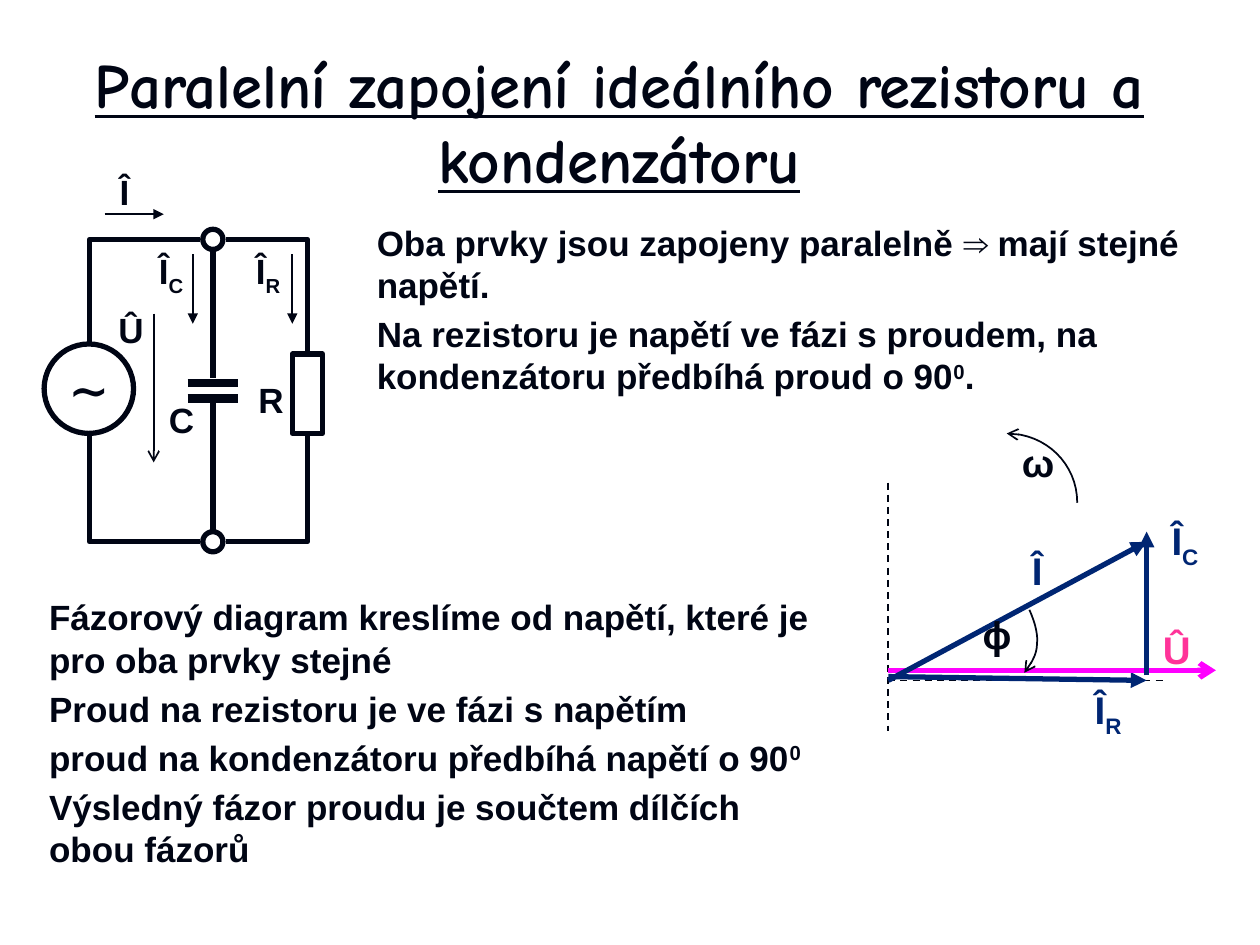
from dataclasses import dataclass

import lxml.etree
import pptx
import pptx.dml.color
import pptx.enum.dml
import pptx.enum.shapes
import pptx.enum.text
import pptx.oxml.ns
import pptx.util

INK, NAVY, MAGENTA, PINK = "000514", "002673", "FF00FF", "FF3399"
SUPER, SUB = 30, -25
ALIGN = pptx.enum.text.PP_ALIGN
ANCHOR = pptx.enum.text.MSO_ANCHOR
SHAPE = pptx.enum.shapes.MSO_SHAPE
Point = tuple[float, float]

deck = pptx.Presentation()
deck.slide_width = pptx.util.Inches(10)
deck.slide_height = pptx.util.Inches(7.5)
CELL = deck.slide_width / 100  # the slide is 100 columns by 75 rows
slide = deck.slides.add_slide(deck.slide_layouts[6])


@dataclass
class Label:
    box: tuple[float, float, float, float]
    symbol: str
    index: str = ""
    color: str = INK
    size: float = 22


@dataclass
class Line:
    start: Point
    end: Point
    color: str = INK
    width: float = 1
    arrow: str = ""
    dashed: bool = False


def grid(*cells: float) -> list[int]:
    return [round(cell * CELL) for cell in cells]


def rgb(color: str) -> pptx.dml.color.RGBColor:
    return pptx.dml.color.RGBColor.from_string(color)


def add_run(paragraph, text: str, size: float, color: str = INK,
            font: str = "Arial", baseline: int = 0):
    run = paragraph.add_run()
    run.text = text
    run.font.size = pptx.util.Pt(size)
    run.font.name = font
    run.font.bold = True
    run.font.color.rgb = rgb(color)
    if baseline:
        run.font._element.set("baseline", str(baseline * 1000))
    return run


def add_frame(box: tuple, anchor=ANCHOR.TOP, wrap: bool = True, inset: float = 0.4):
    frame = slide.shapes.add_textbox(*grid(*box)).text_frame
    frame.word_wrap = wrap
    frame.vertical_anchor = anchor
    frame.margin_left = frame.margin_right = grid(inset)[0]
    frame.margin_top = frame.margin_bottom = grid(0.4)[0]
    return frame


def draw_body(box: tuple, paragraphs: list[list[tuple[str, int]]]) -> None:
    """Write paragraphs given as lists of (text, baseline shift) runs."""
    frame = add_frame(box)
    for number, runs in enumerate(paragraphs):
        paragraph = frame.add_paragraph() if number else frame.paragraphs[0]
        paragraph.space_before = pptx.util.Pt(4)
        for text, baseline in runs:
            add_run(paragraph, text, 20, baseline=baseline)


def draw_label(label: Label, anchor, align) -> None:
    paragraph = add_frame(label.box, anchor, wrap=False).paragraphs[0]
    paragraph.alignment = align
    add_run(paragraph, label.symbol, label.size, label.color)
    if label.index:
        add_run(paragraph, label.index, label.size, label.color, baseline=SUB)


def style_line(line, color: str, width: float, head: str = "", tail: str = "") -> None:
    line.color.rgb = rgb(color)
    line.width = pptx.util.Pt(width)
    for end, arrow in (("a:headEnd", head), ("a:tailEnd", tail)):
        if arrow:
            lxml.etree.SubElement(line._get_or_add_ln(), pptx.oxml.ns.qn(end), type=arrow)


def draw_line(line: Line) -> None:
    connector = slide.shapes.add_connector(
        pptx.enum.shapes.MSO_CONNECTOR.STRAIGHT, *grid(*line.start, *line.end))
    if line.dashed:
        connector.line.dash_style = pptx.enum.dml.MSO_LINE.DASH
    style_line(connector.line, line.color, line.width, tail=line.arrow)
    lxml.etree.SubElement(connector._element.spPr, pptx.oxml.ns.qn("a:effectLst"))


def draw_path(points: list[Point], width: float, head: str = "", tail: str = "") -> None:
    builder = slide.shapes.build_freeform(*grid(*points[0]))
    builder.add_line_segments([grid(*point) for point in points[1:]], close=False)
    outline = builder.convert_to_shape()
    outline.fill.background()
    outline.shadow.inherit = False
    style_line(outline.line, INK, width, head, tail)


def bezier(p0: Point, p1: Point, p2: Point, p3: Point, steps: int = 16) -> list[Point]:
    shares = [step / steps for step in range(steps + 1)]
    return [tuple((1 - t) ** 3 * a + 3 * (1 - t) ** 2 * t * b
                  + 3 * (1 - t) * t ** 2 * c + t ** 3 * d
                  for a, b, c, d in zip(p0, p1, p2, p3)) for t in shares]


def draw_part(kind, box: tuple):
    part = slide.shapes.add_shape(kind, *grid(*box))
    part.fill.background()
    part.shadow.inherit = False
    style_line(part.line, INK, 3)
    return part


def draw_texts() -> None:
    title = add_frame((3.5, 2.1, 91.3, 15), ANCHOR.MIDDLE, inset=1).paragraphs[0]
    title.alignment = ALIGN.CENTER
    add_run(title, "Paralelní zapojení ideálního rezistoru a kondenzátoru", 36,
            font="Comic Neue").font.underline = True
    draw_body((29.5, 17.2, 66.1, 14.8), [
        [("Oba prvky jsou zapojeny paralelně ⇒ mají stejné napětí.", 0)],
        [("Na rezistoru je napětí ve fázi s proudem, na kondenzátoru předbíhá proud o 90", 0),
         ("0", SUPER), (".", 0)]])
    draw_body((3.5, 46.9, 63, 23), [
        [("Fázorový diagram kreslíme od napětí, které je pro oba prvky stejné", 0)],
        [("Proud na rezistoru je ve fázi s napětím", 0)],
        [("proud na kondenzátoru předbíhá napětí o 90", 0), ("0", SUPER)],
        [("Výsledný fázor proudu je součtem dílčích obou fázorů", 0)]])


def draw_phasors() -> None:
    origin, right = (70.5, 54), 91
    for line in (
            Line((70.5, 38.3), (70.5, 58), dashed=True),
            Line(origin, (92.5, 54), dashed=True),
            Line((70.5, 53.7), (right, 54), NAVY, 3, "triangle"),
            Line((70.5, 53.2), (96.5, 53.2), MAGENTA, 3, "arrow"),
            Line((right, 53.6), (right, 42.2), NAVY, 3, "triangle"),
            Line(origin, (right, 43), NAVY, 3, "triangle")):
        draw_line(line)
    draw_path(bezier((79.9, 34.4), (83, 34.4), (85.5, 36.8), (85.5, 39.9)), 1, head="arrow")
    draw_path(bezier((81.7, 48.4), (82.1, 49.3), (82.4, 50.3), (82.3, 51.1))
              + bezier((82.3, 51.1), (82.3, 52), (81.8, 52.7), (81.3, 53.4))[1:],
              1, tail="arrow")
    for label in (
            Label((86.2, 54.3, 3.2, 4.5), "Î", "R", NAVY),
            Label((91.9, 49.3, 3, 4.5), "Û", color=PINK),
            Label((80.7, 34.4, 2.9, 4.5), "ω"),
            Label((92.3, 40.9, 3.2, 4.5), "Î", "C", NAVY),
            Label((81.5, 43, 1.6, 4.5), "Î", color=NAVY),
            Label((77.6, 48.1, 2.6, 4.5), "ϕ")):
        draw_label(label, ANCHOR.MIDDLE, ALIGN.RIGHT)


def draw_circuit() -> None:
    source_x, node_x, resistor_x, top, bottom = 7.1, 16.9, 24.4, 19, 43
    source = draw_part(SHAPE.OVAL, (3.5, 27.3, 7.1, 7.1)).text_frame
    source.word_wrap = False
    source.vertical_anchor = ANCHOR.MIDDLE
    source.paragraphs[0].alignment = ALIGN.CENTER
    add_run(source.paragraphs[0], "∼", 28, font="Times New Roman")
    draw_part(SHAPE.RECTANGLE, (23.2, 28.1, 2.4, 6.3))
    for node_y, source_end, resistor_end, plate_y in (
            (top, 27.2, 28, 30.4), (bottom, 34.5, 34.5, 31.6)):
        inward = 1 if node_y == top else -1
        draw_part(SHAPE.OVAL, (node_x - 0.8, node_y - 0.8, 1.6, 1.6))
        draw_path([(node_x - 1, node_y), (source_x, node_y), (source_x, source_end)], 3)
        draw_path([(node_x + 1, node_y), (resistor_x, node_y), (resistor_x, resistor_end)], 3)
        draw_line(Line((node_x, node_y + 0.8 * inward), (node_x, plate_y - 0.4 * inward), width=3))
        draw_line(Line((node_x - 2, plate_y), (node_x + 2, plate_y), width=5))
    draw_line(Line((12.2, 24.9), (12.2, 36.7), arrow="arrow"))
    draw_line(Line((8.3, 17), (13, 17), arrow="triangle"))
    for current_x in (15.3, 23.2):
        draw_line(Line((current_x, 20.2), (current_x, 25.7), arrow="triangle"))
    for label in (
            Label((9.1, 13.1, 1.6, 4.1), "Î", size=20),
            Label((13, 31.2, 2.8, 4.1), "C", size=20),
            Label((9, 24.1, 2.8, 4.1), "Û", size=20),
            Label((12.2, 19.4, 2.9, 4.2), "Î", "C", size=20),
            Label((19.9, 19.4, 2.9, 4.2), "Î", "R", size=20),
            Label((20.1, 29.6, 2.8, 4.1), "R", size=20)):
        draw_label(label, ANCHOR.TOP, ALIGN.LEFT)


if __name__ == "__main__":
    draw_texts()
    draw_phasors()
    draw_circuit()
    deck.save("out.pptx")
